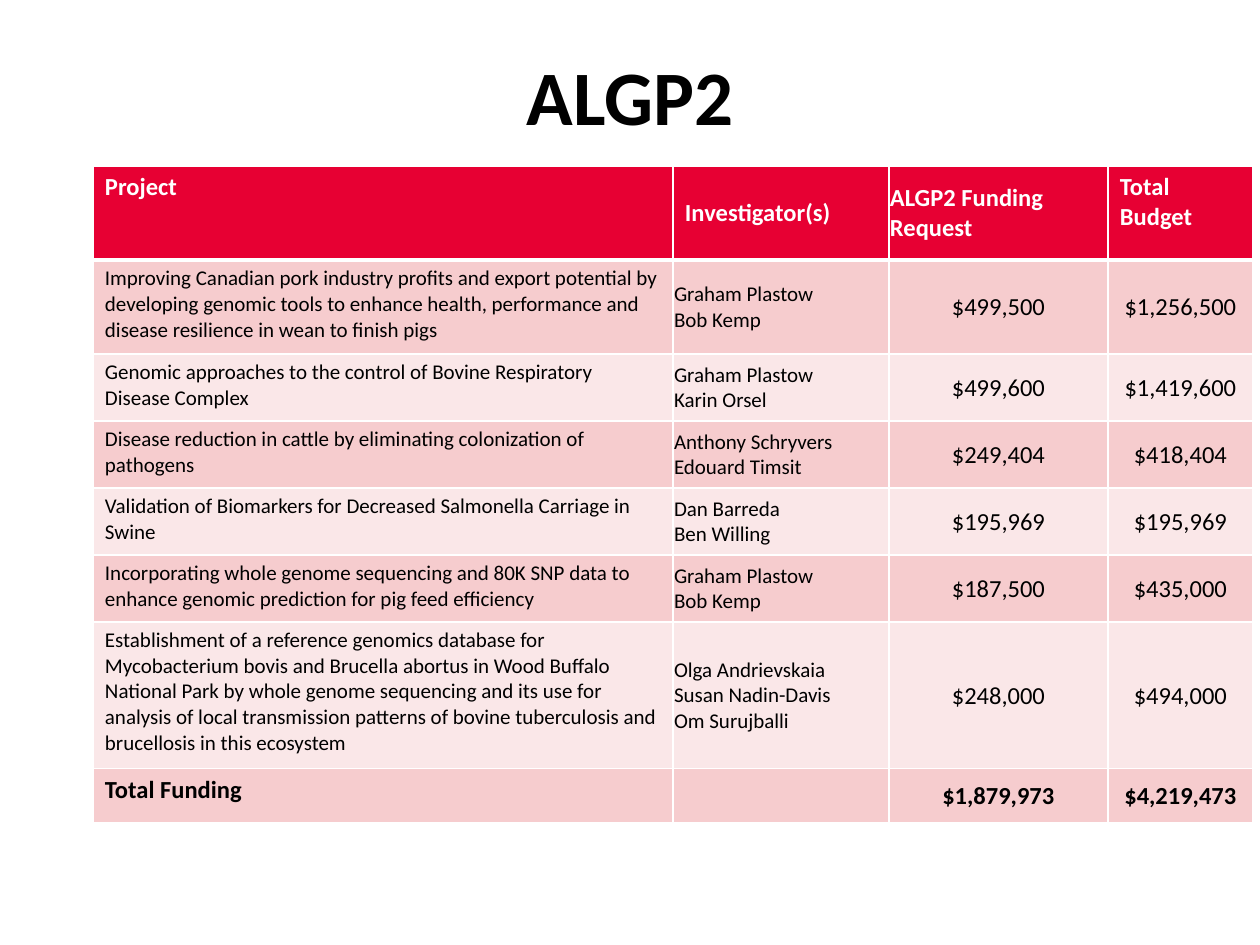
from copy import deepcopy
from dataclasses import dataclass

from lxml import etree
from pptx import Presentation
from pptx.dml.color import RGBColor
from pptx.enum.text import MSO_ANCHOR, PP_ALIGN
from pptx.oxml.ns import qn
from pptx.util import Emu, Pt

LEFT, CENTER = PP_ALIGN.LEFT, PP_ALIGN.CENTER
TOP, MIDDLE = MSO_ANCHOR.TOP, MSO_ANCHOR.MIDDLE
EMU_PER_PX = 914400 / 126
FONT = "Calibri"
COLORS = {
    "black": "000000",
    "white": "FFFFFF",
    "header": "E70033",
    "odd": "F6CCCE",
    "even": "FAE7E8",
}
COLUMN_WIDTHS = (580, 216, 219, 145)
ROW_HEIGHTS = (94, 94, 67, 67, 67, 67, 147, 54)
WIDE_MARGINS = (12, 6, 12, 6)
TIGHT_MARGINS = (1, 1, 1, 0)


@dataclass(frozen=True)
class CellStyle:
    size: int = 14
    bold: bool = False
    color: str = "black"
    align: PP_ALIGN = LEFT
    anchor: MSO_ANCHOR = TOP
    margins: tuple[int, ...] = WIDE_MARGINS


@dataclass(frozen=True)
class TableRow:
    texts: tuple[str, str, str, str]
    styles: tuple[CellStyle, ...]


HEADER = CellStyle(bold=True, color="white")
HEADER_MIDDLE = CellStyle(bold=True, color="white", anchor=MIDDLE)
HEADER_TIGHT = CellStyle(bold=True, color="white", anchor=MIDDLE, margins=TIGHT_MARGINS)
PROJECT = CellStyle(size=12)
INVESTIGATOR = CellStyle(size=12, anchor=MIDDLE, margins=TIGHT_MARGINS)
AMOUNT = CellStyle(align=CENTER, anchor=MIDDLE, margins=TIGHT_MARGINS)
TOTAL = CellStyle(bold=True)
TOTAL_AMOUNT = CellStyle(bold=True, align=CENTER, anchor=MIDDLE, margins=TIGHT_MARGINS)

HEADER_STYLES = (HEADER, HEADER_MIDDLE, HEADER_TIGHT, HEADER)
PROJECT_STYLES = (PROJECT, INVESTIGATOR, AMOUNT, AMOUNT)
TOTAL_STYLES = (TOTAL, INVESTIGATOR, TOTAL_AMOUNT, TOTAL_AMOUNT)

PROJECTS = (
    ("Improving Canadian pork industry profits and export potential by developing "
     "genomic tools to enhance health, performance and disease resilience in wean "
     "to finish pigs",
     "Graham Plastow\nBob Kemp", "$499,500", "$1,256,500"),
    ("Genomic approaches to the control of Bovine Respiratory Disease Complex",
     "Graham Plastow\nKarin Orsel", "$499,600", "$1,419,600"),
    ("Disease reduction in cattle by eliminating colonization of pathogens",
     "Anthony Schryvers\nEdouard Timsit", "$249,404", "$418,404"),
    ("Validation of Biomarkers for Decreased Salmonella Carriage in Swine",
     "Dan Barreda\nBen Willing", "$195,969", "$195,969"),
    ("Incorporating whole genome sequencing and 80K SNP data to enhance genomic "
     "prediction for pig feed efficiency",
     "Graham Plastow\nBob Kemp", "$187,500", "$435,000"),
    ("Establishment of a reference genomics database for Mycobacterium bovis and "
     "Brucella abortus in Wood Buffalo National Park by whole genome sequencing and "
     "its use for analysis of local transmission patterns of bovine tuberculosis and "
     "brucellosis in this ecosystem",
     "Olga Andrievskaia\nSusan Nadin-Davis\nOm Surujballi", "$248,000", "$494,000"),
)
ROWS = (
    TableRow(("Project", "Investigator(s)", "ALGP2 Funding Request", "Total Budget"),
             HEADER_STYLES),
    *(TableRow(project, PROJECT_STYLES) for project in PROJECTS),
    TableRow(("Total Funding", "", "$1,879,973", "$4,219,473"), TOTAL_STYLES),
)


def px(length: int) -> Emu:
    return Emu(round(length * EMU_PER_PX))


def rgb(name: str) -> RGBColor:
    return RGBColor.from_string(COLORS[name])


def write_text(text_frame, text: str, *, size: int, bold: bool = False,
               color: str = "black", align: PP_ALIGN = LEFT) -> None:
    """Fill the first paragraph; newlines become line breaks of the same size."""
    paragraph = text_frame.paragraphs[0]
    paragraph.text = text
    paragraph.alignment = align
    for run in paragraph.runs:
        run.font.name = FONT
        run.font.size = Pt(size)
        run.font.bold = bold
        run.font.color.rgb = rgb(color)
    for line_break in paragraph._p.findall(qn("a:br")):
        line_break.append(deepcopy(paragraph.runs[0]._r.rPr))


def set_borders(cell, bottom_width: int) -> None:
    properties = cell._tc.get_or_add_tcPr()
    widths = {"lnL": 1, "lnR": 1, "lnT": 1, "lnB": bottom_width}
    for index, (tag, width) in enumerate(widths.items()):
        line = etree.Element(qn(f"a:{tag}"), w=str(Pt(width)))
        fill = etree.SubElement(line, qn("a:solidFill"))
        etree.SubElement(fill, qn("a:srgbClr"), val=COLORS["white"])
        properties.insert(index, line)


def format_cell(cell, text: str, style: CellStyle, fill: str, bottom_width: int) -> None:
    cell.fill.solid()
    cell.fill.fore_color.rgb = rgb(fill)
    set_borders(cell, bottom_width)
    cell.vertical_anchor = style.anchor
    (cell.margin_left, cell.margin_top,
     cell.margin_right, cell.margin_bottom) = map(px, style.margins)
    write_text(cell.text_frame, text, size=style.size, bold=style.bold,
               color=style.color, align=style.align)


def add_title(slide) -> None:
    title = slide.shapes.add_textbox(px(63), px(38), px(1134), px(157))
    text_frame = title.text_frame
    text_frame.word_wrap = True
    text_frame.vertical_anchor = TOP
    text_frame.margin_top = px(10)
    write_text(text_frame, "ALGP2", size=44, bold=True, align=CENTER)


def add_funding_table(slide) -> None:
    table = slide.shapes.add_table(
        len(ROWS), len(COLUMN_WIDTHS), px(93), px(166),
        px(sum(COLUMN_WIDTHS)), px(sum(ROW_HEIGHTS))).table
    for column, width in zip(table.columns, COLUMN_WIDTHS):
        column.width = px(width)
    for index, (row, height) in enumerate(zip(ROWS, ROW_HEIGHTS)):
        table.rows[index].height = px(height)
        fill = "header" if index == 0 else "odd" if index % 2 else "even"
        bottom_width = 3 if index == 0 else 1
        for cell, text, style in zip(table.rows[index].cells, row.texts, row.styles):
            format_cell(cell, text, style, fill, bottom_width)


def main() -> None:
    presentation = Presentation()
    presentation.slide_width, presentation.slide_height = px(1260), px(945)
    slide = presentation.slides.add_slide(presentation.slide_layouts[6])
    add_title(slide)
    add_funding_table(slide)
    presentation.save("out.pptx")


if __name__ == "__main__":
    main()
